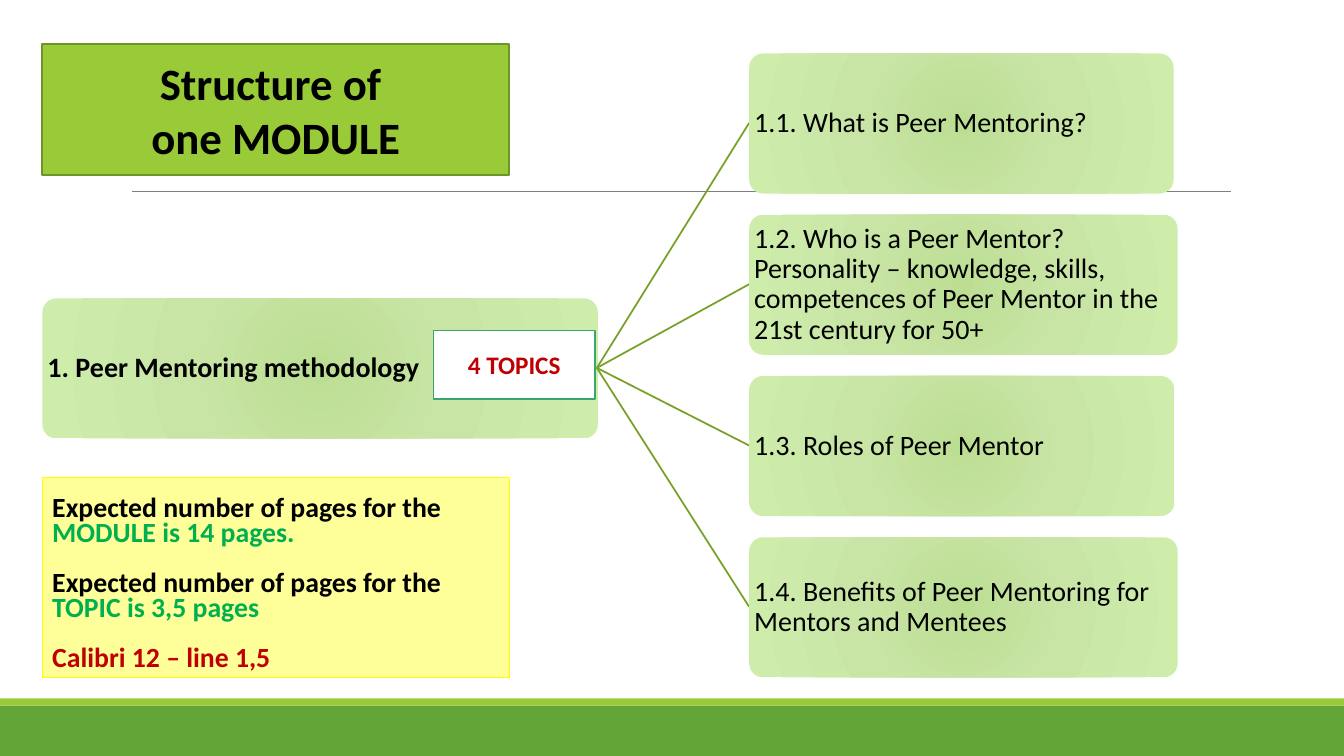
from lxml.etree import SubElement
from pptx import Presentation
from pptx.dml.color import RGBColor
from pptx.enum.shapes import MSO_CONNECTOR, MSO_SHAPE
from pptx.enum.text import MSO_ANCHOR, PP_ALIGN
from pptx.oxml import parse_xml
from pptx.oxml.ns import nsdecls, qn
from pptx.util import Pt

EMU_PER_PX = 9144  # 100 px to the inch
FONT = "Calibri"
BLACK, GREEN, RED = "000000", "00B050", "C00000"

# Topic text and card width
TOPICS = [
    ("1.1. What is Peer Mentoring?", 421),
    ("1.2. Who is a Peer Mentor? Personality – knowledge, skills, "
     "competences of Peer Mentor in the 21st century for 50+", 425),
    ("1.3. Roles of Peer Mentor", 422),
    ("1.4. Benefits of Peer Mentoring for Mentors and Mentees", 425),
]
TOPIC_LEFT, TOPIC_TOP, TOPIC_PITCH = 743, 53, 160
CARD_HEIGHT = 139
MODULE_LEFT, MODULE_TOP, MODULE_WIDTH = 42, 296, 551

# Each paragraph is a list of (text, colour) runs
PAGE_NOTES = [
    [("Expected number of pages for the ", BLACK), ("MODULE is 14 pages.", GREEN)],
    [("Expected number of pages for the ", BLACK), ("TOPIC is 3,5 pages", GREEN)],
    [("Calibri 12 – line 1,5", RED)],
]

CARD_GRADIENT = f"""<a:gradFill {nsdecls('a')} rotWithShape="1"><a:gsLst>
<a:gs pos="0"><a:srgbClr val="BCDE93"/></a:gs>
<a:gs pos="45000"><a:srgbClr val="C8E5A5"/></a:gs>
<a:gs pos="100000"><a:srgbClr val="CEEDAB"/></a:gs>
</a:gsLst><a:path path="circle">
<a:fillToRect l="50000" t="50000" r="50000" b="50000"/></a:path></a:gradFill>"""


def px(length):
    return length * EMU_PER_PX


def rgb(colour):
    return RGBColor.from_string(colour)


def add_box(slide, left, top, width, height, fill, line=None, line_width=1.25,
            kind=MSO_SHAPE.RECTANGLE):
    box = slide.shapes.add_shape(kind, px(left), px(top), px(width), px(height))
    box.shadow.inherit = False
    box.fill.solid()
    box.fill.fore_color.rgb = rgb(fill)
    if line:
        box.line.color.rgb = rgb(line)
        box.line.width = Pt(line_width)
    else:
        box.line.fill.background()
    return box


def write(box, paragraphs, size, bold=False, align=PP_ALIGN.CENTER,
          anchor=MSO_ANCHOR.MIDDLE, spacing=None, gap=0):
    frame = box.text_frame
    frame.word_wrap = True
    frame.vertical_anchor = anchor
    for index, runs in enumerate(paragraphs):
        paragraph = frame.paragraphs[0] if index == 0 else frame.add_paragraph()
        paragraph.alignment = align
        paragraph.font.name = FONT
        paragraph.font.size = Pt(size)
        paragraph.font.bold = bold
        if spacing:
            paragraph.line_spacing = spacing
        if index and gap:
            paragraph.space_before = Pt(gap)
        for text, colour in runs:
            run = paragraph.add_run()
            run.text = text
            run.font.color.rgb = rgb(colour)


def add_card(slide, left, top, width, text, bold=False):
    card = add_box(slide, left, top, width, CARD_HEIGHT, "C8E5A5",
                   kind=MSO_SHAPE.ROUNDED_RECTANGLE)
    card.adjustments[0] = 0.1
    properties = card._element.spPr
    properties.replace(properties.find(qn("a:solidFill")), parse_xml(CARD_GRADIENT))
    frame = card.text_frame
    frame.margin_left = frame.margin_right = px(1)
    frame.margin_top = frame.margin_bottom = px(1)
    write(card, [[(text, BLACK)]], 20, bold, PP_ALIGN.LEFT, spacing=0.9)


def add_line(slide, start, end, colour, width):
    line = slide.shapes.add_connector(
        MSO_CONNECTOR.STRAIGHT, *[px(value) for value in (*start, *end)])
    line.line.color.rgb = rgb(colour)
    line.line.width = Pt(width)
    SubElement(line._element.spPr, qn("a:effectLst"))


def add_topic_tree(slide):
    add_card(slide, MODULE_LEFT, MODULE_TOP, MODULE_WIDTH,
             "1. Peer Mentoring methodology", bold=True)
    branch_start = (MODULE_LEFT + MODULE_WIDTH - 1, MODULE_TOP + CARD_HEIGHT // 2)
    for index, (text, width) in enumerate(TOPICS):
        top = TOPIC_TOP + index * TOPIC_PITCH
        add_line(slide, branch_start, (TOPIC_LEFT, top + CARD_HEIGHT // 2),
                 "79A029", 1.25)
        add_card(slide, TOPIC_LEFT, top, width, text)


def main():
    prs = Presentation()
    prs.slide_width, prs.slide_height = px(1333), px(750)
    slide = prs.slides.add_slide(prs.slide_layouts[6])

    # Footer bands and title rule
    add_box(slide, 0, 700, 1333, 50, "63A537")
    add_box(slide, 0, 693, 1333, 7, "99CB38")
    add_line(slide, (131, 190), (1221, 190), "7F7F7F", 0.75)

    # Module and its topics
    add_topic_tree(slide)

    # Title
    title = add_box(slide, 42, 44, 463, 130, "99CB38", "6F9428")
    write(title, [[("Structure of ", BLACK)], [("one MODULE", BLACK)]], 32, bold=True)

    # Page counts
    page_counts = add_box(slide, 42, 474, 463, 198, "FFFF99", "FFFF00", 0.75)
    write(page_counts, PAGE_NOTES, 19.8, True, PP_ALIGN.LEFT,
          MSO_ANCHOR.BOTTOM, spacing=0.75, gap=18)

    # Topic count
    topic_count = add_box(slide, 430, 328, 160, 68, "FFFFFF", "37A76F")
    write(topic_count, [[("4 TOPICS", RED)]], 18, bold=True)

    prs.save("out.pptx")


if __name__ == "__main__":
    main()
